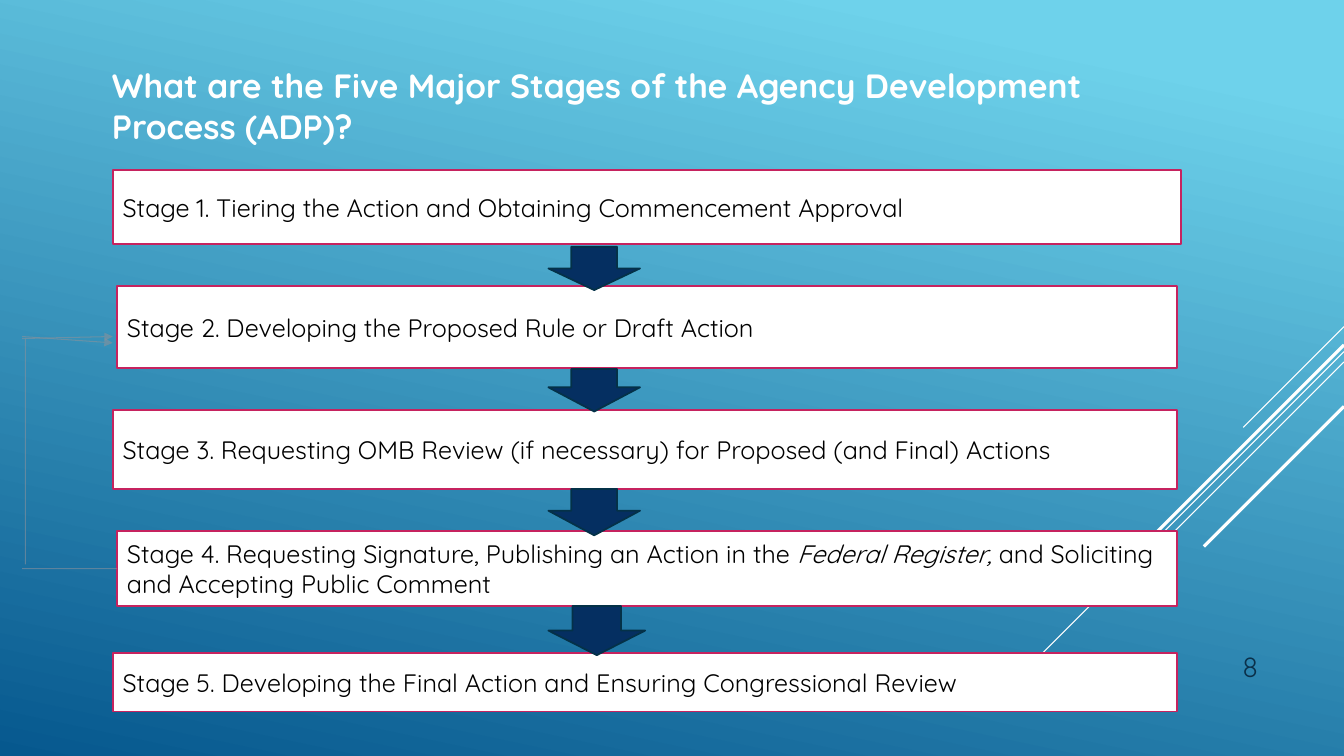
from lxml import etree
from pptx import Presentation
from pptx.dml.color import RGBColor
from pptx.enum.shapes import MSO_CONNECTOR, MSO_SHAPE
from pptx.enum.text import MSO_ANCHOR, PP_ALIGN
from pptx.oxml.ns import qn
from pptx.util import Cm, Pt

RECTANGLE, DOWN_ARROW = MSO_SHAPE.RECTANGLE, MSO_SHAPE.DOWN_ARROW
STRAIGHT = MSO_CONNECTOR.STRAIGHT
TOP, MIDDLE, BOTTOM = MSO_ANCHOR.TOP, MSO_ANCHOR.MIDDLE, MSO_ANCHOR.BOTTOM
LEFT, RIGHT = PP_ALIGN.LEFT, PP_ALIGN.RIGHT

WHITE = RGBColor(0xFF, 0xFF, 0xFF)
BLACK = RGBColor(0x00, 0x00, 0x00)
SKY = RGBColor(0x6E, 0xD2, 0xEB)
OCEAN = RGBColor(0x06, 0x58, 0x8E)
CRIMSON = RGBColor(0xC6, 0x23, 0x5F)
NAVY = RGBColor(0x05, 0x2F, 0x61)
NAVY_EDGE = RGBColor(0x04, 0x31, 0x48)
GRAY = RGBColor(0x89, 0x91, 0x9C)
NUMBER_BLUE = RGBColor(0x0A, 0x30, 0x4A)


def write_text(box, runs, anchor, align, **font_format):
    """Fill a box with one paragraph of (text, italic) runs."""
    frame = box.text_frame
    frame.word_wrap = True
    frame.vertical_anchor = anchor
    para = frame.paragraphs[0]
    para.alignment = align
    color = font_format.pop("color")
    for text, italic in runs:
        span = para.add_run()
        span.text = text
        span.font.color.rgb = color
        for name, value in {"name": "Quicksand", "italic": italic, **font_format}.items():
            setattr(span.font, name, value)


def draw_line(start, end, color, width):
    line = slide.shapes.add_connector(STRAIGHT, *(Cm(value) for value in start + end))
    line.line.color.rgb = color
    line.line.width = Pt(width)
    etree.SubElement(line._element.spPr, qn("a:effectLst"))
    return line


deck = Presentation()
deck.slide_width, deck.slide_height = Cm(33.87), Cm(19.05)
slide = deck.slides.add_slide(deck.slide_layouts[6])

background = slide.background.fill
background.gradient()
background.gradient_angle = 258
for stop, color, position in zip(background.gradient_stops, (SKY, OCEAN), (0.1, 1)):
    stop.color.rgb = color
    stop.position = position

# Diagonal rays from the right edge: start height, horizontal run, width
for top, run, width in [(8.23, 2.54, 0.75), (8.86, 8.28, 0.75), (9.12, 5.26, 0.75),
                        (8.69, 4.85, 2.25), (10.24, 3.53, 2.25)]:
    draw_line((33.87, top), (33.87 - run, top + run), WHITE, width)

title = slide.shapes.add_textbox(Cm(2.57), Cm(1.52), Cm(28.27), Cm(2.4))
write_text(title, [("What are the Five Major Stages of the Agency Development Process (ADP)?", False)],
           TOP, LEFT, size=Pt(24), bold=True, color=WHITE)

# Stage boxes: left, top, width, height, runs
stages = [
    (2.84, 4.29, 26.92, 1.86,
     [("Stage 1. Tiering the Action and Obtaining Commencement Approval", False)]),
    (2.95, 7.2, 26.72, 2.08,
     [("Stage 2. Developing the Proposed Rule or Draft Action", False)]),
    (2.84, 10.34, 26.82, 1.98,
     [("Stage 3. Requesting OMB Review (if necessary) for Proposed (and Final) Actions", False)]),
    (2.95, 13.39, 26.72, 1.88,
     [("Stage 4. Requesting Signature, Publishing an Action in the ", False),
      ("Federal Register, ", True),
      ("and Soliciting and Accepting Public Comment", False)]),
    (2.84, 16.46, 26.82, 1.47,
     [("Stage 5. Developing the Final Action and Ensuring Congressional Review", False)]),
]
# Arrows between stages: top, width, height, head proportion
arrows = [(6.22, 2.31, 1.09, 0.5), (9.3, 2.31, 1.07, 0.57),
          (12.32, 2.31, 1.17, 0.53), (15.27, 2.44, 1.24, 0.5)]

blocks = [(RECTANGLE, stage[:4], WHITE, CRIMSON) for stage in stages]
blocks += [(DOWN_ARROW, (13.82, top, width, height), NAVY, NAVY_EDGE)
           for top, width, height, head in arrows]
shapes = []
for kind, place, fill, edge in blocks:
    shape = slide.shapes.add_shape(kind, *(Cm(value) for value in place))
    shape.shadow.inherit = False
    shape.fill.solid()
    shape.fill.fore_color.rgb = fill
    shape.line.color.rgb = edge
    shape.line.width = Pt(1.25)
    shapes.append(shape)

for box, stage in zip(shapes, stages):
    write_text(box, stage[4], MIDDLE, LEFT, size=Pt(18), color=BLACK)
for arrow, (top, width, height, head) in zip(shapes[len(stages):], arrows):
    arrow.adjustments[1] = head

# Feedback loop from stage 4 back to stage 2
for start, end, has_head in [((2.95, 14.33), (0.56, 14.33), False),
                             ((0.64, 14.22), (0.64, 8.53), False),
                             ((0.56, 8.48), (2.84, 8.64), True),
                             ((0.56, 8.53), (2.84, 8.48), True)]:
    loop = draw_line(start, end, GRAY, 0.75)
    outline = loop.line._get_or_add_ln()
    etree.SubElement(outline.find(".//" + qn("a:srgbClr")), qn("a:alpha"), val="60000")
    if has_head:
        etree.SubElement(outline, qn("a:tailEnd"), type="triangle")

number = slide.shapes.add_textbox(Cm(28.78), Cm(15.49), Cm(3.18), Cm(1.85))
write_text(number, [("8", False)], BOTTOM, RIGHT, size=Pt(20), color=NUMBER_BLUE)

deck.save("out.pptx")
